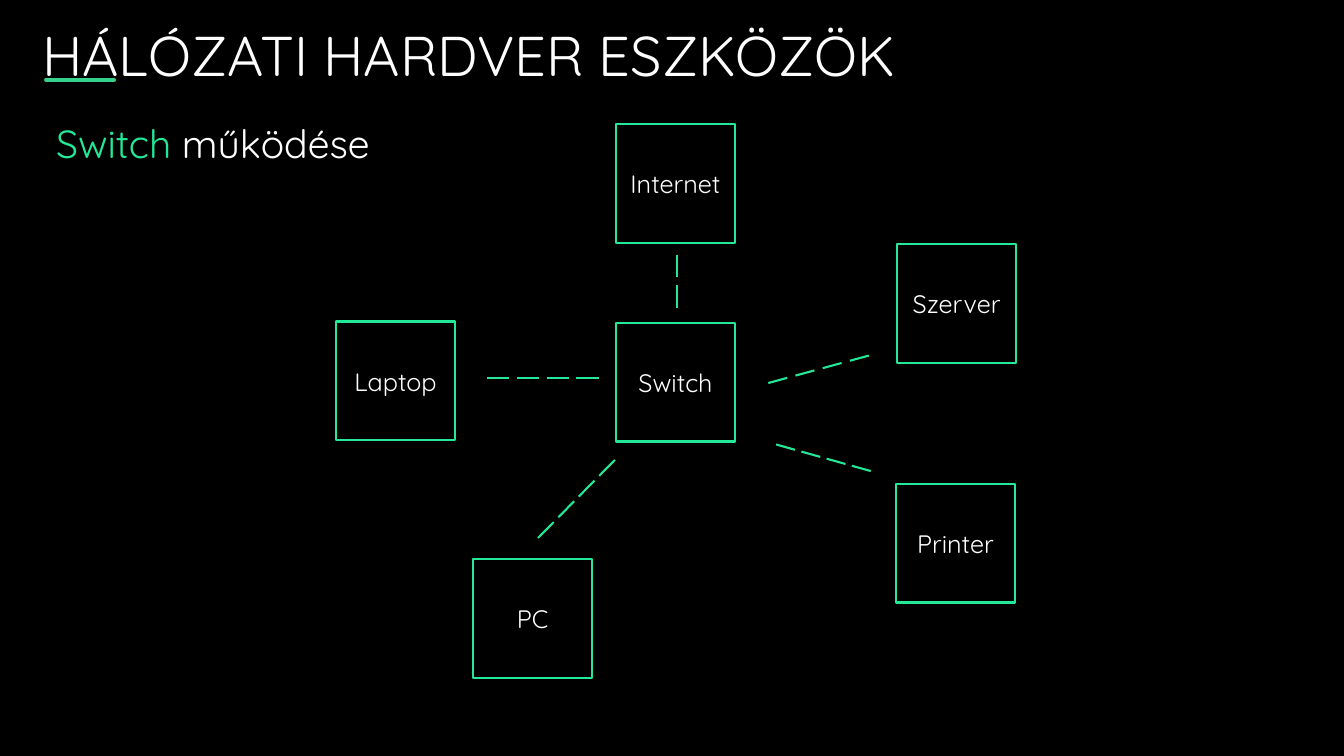
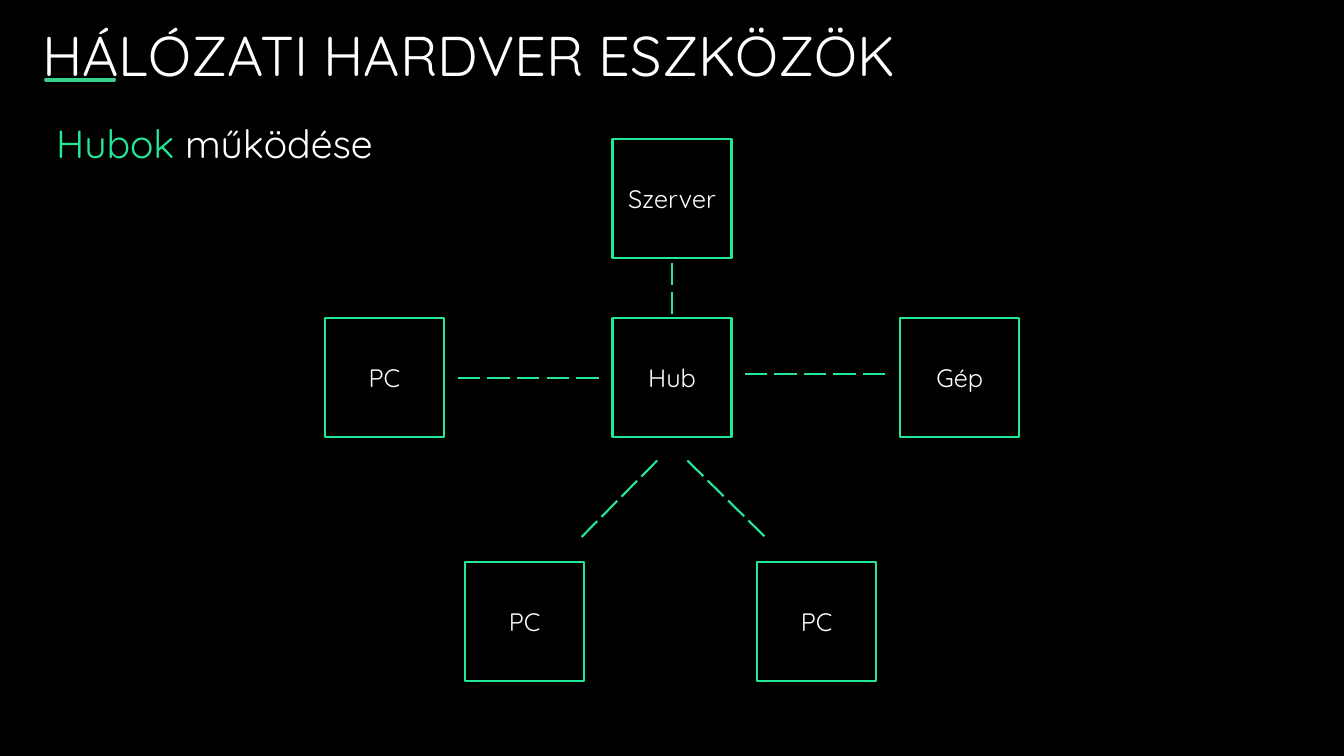
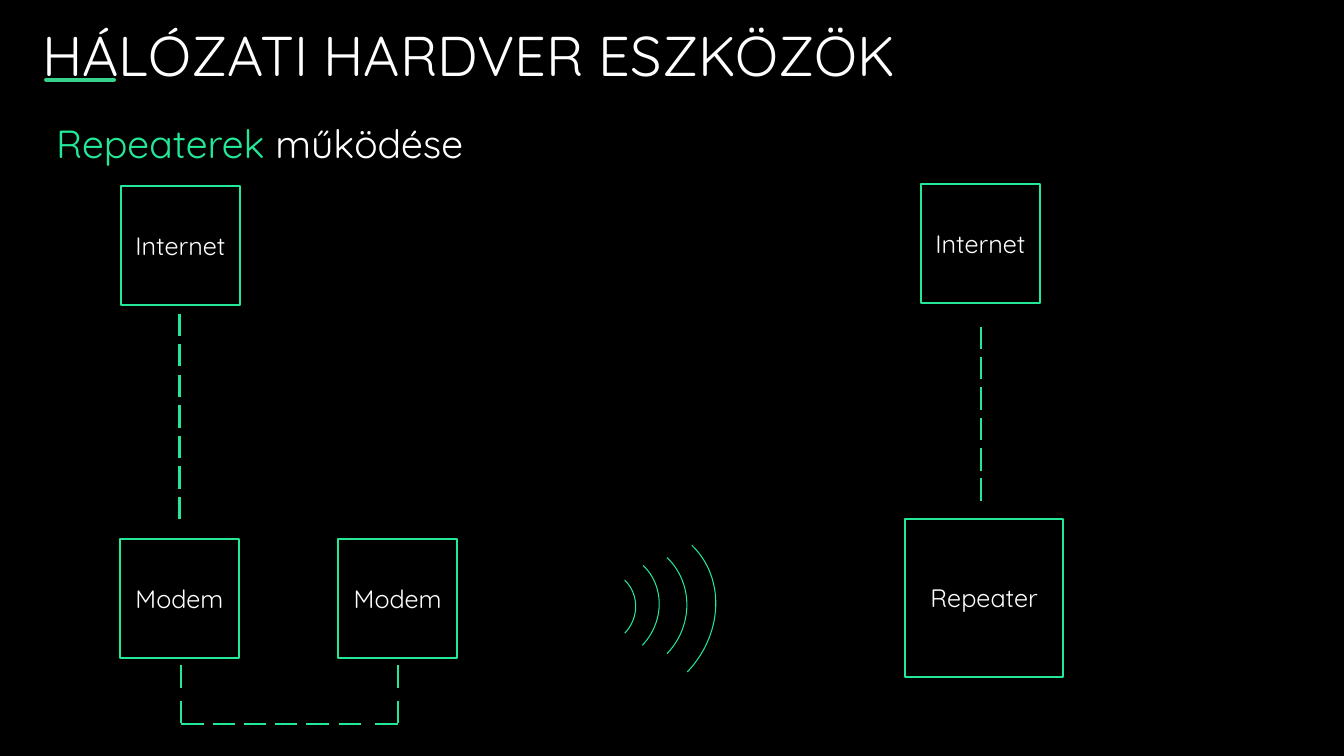
from dataclasses import dataclass
from math import hypot

from lxml.etree import SubElement
from pptx import Presentation
from pptx.dml.color import RGBColor
from pptx.enum.shapes import MSO_CONNECTOR, MSO_SHAPE
from pptx.enum.text import MSO_ANCHOR, MSO_AUTO_SIZE, PP_ALIGN
from pptx.oxml.ns import qn
from pptx.util import Pt


@dataclass(frozen=True)
class Theme:
    background: RGBColor = RGBColor(0x00, 0x00, 0x00)
    text: RGBColor = RGBColor(0xFF, 0xFF, 0xFF)
    accent: RGBColor = RGBColor(0x22, 0xE8, 0x97)
    underline: RGBColor = RGBColor(0x37, 0xD1, 0x8B)
    font: str = "Quicksand"
    title_size: float = 40
    topic_size: float = 28
    device_size: float = 18
    underline_width: float = 3
    line_width: float = 1.5
    wave_width: float = 0.75


THEME = Theme()
TITLE = "HÁLÓZATI HARDVER ESZKÖZÖK"
TOPIC_ENDING = "működése"
DEVICE = 85
LARGE_DEVICE = 113
DASH = 16
SHORT_DASH = 14
WAVE_ANGLE = 43.7

# devices: label, left, top, side; cables: start, end, dash count, dash length
SLIDES = [
    {
        "topic": "Switch",
        "topic_width": 313,
        "devices": [
            ("Switch", 440, 230.4, DEVICE),
            ("Laptop", 240, 229.6, DEVICE),
            ("PC", 338, 399, DEVICE),
            ("Szerver", 640.8, 174, DEVICE),
            ("Printer", 640, 345.4, DEVICE),
            ("Internet", 440, 88.8, DEVICE),
        ],
        "cables": [
            ((427.7, 270), (347.8, 270), 4, DASH),
            ((439.2, 328.5), (384.3, 384.3), 4, DASH),
            ((622, 336.5), (554.4, 317.5), 4, SHORT_DASH),
            ((620.6, 254), (548.8, 273.6), 4, SHORT_DASH),
            ((483.4, 182), (483.4, 219.8), 2, DASH),
        ],
        "waves": [],
    },
    {
        "topic": "Hubok",
        "topic_width": 313,
        "devices": [
            ("Hub", 437.5, 227.3, DEVICE),
            ("Szerver", 437.5, 99.4, DEVICE),
            ("Gép", 643, 227.3, DEVICE),
            ("PC", 540.7, 401.7, DEVICE),
            ("PC", 232, 227.3, DEVICE),
            ("PC", 332.3, 401.7, DEVICE),
        ],
        "cables": [
            ((427.7, 270), (326.9, 270), 5, DASH),
            ((546, 383), (491, 329), 4, DASH),
            ((469.4, 329), (415.4, 383.6), 4, DASH),
            ((632.4, 267.2), (532, 267.2), 5, DASH),
            ((480, 187.7), (480, 224.6), 2, DASH),
        ],
        "waves": [],
    },
    {
        "topic": "Repeaterek",
        "topic_width": 340.5,
        "devices": [
            ("Internet", 86.4, 133, DEVICE),
            ("Modem", 85.7, 385.2, DEVICE),
            ("Modem", 241.6, 385.2, DEVICE),
            ("Repeater", 646.5, 370.6, LARGE_DEVICE),
            ("Internet", 657.8, 131.6, DEVICE),
        ],
        "cables": [
            ((128.2, 224), (128.2, 370.8), 7, DASH),
            ((129.2, 475.2), (129.2, 516.4), 2, DASH),
            ((129.6, 517), (234.7, 517), 5, DASH),
            ((241.9, 517.4), (284.2, 517.4), 2, DASH),
            ((284, 475.2), (284, 516.4), 2, DASH),
            ((700.6, 233.3), (700.6, 357.8), 6, DASH),
        ],
        "waves": [
            (401, 406.8, 52.6, 54.7),
            (391.7, 392.4, 77.8, 83.5),
            (394.6, 384.5, 95, 99.4),
            (387.4, 370.8, 120.2, 135.4),
        ],
    },
]


def style_run(run, size, color):
    run.font.name = THEME.font
    run.font.size = Pt(size)
    run.font.color.rgb = color


def style_line(line, color, width):
    line.color.rgb = color
    line.width = Pt(width)


def add_line(slide, start, end, color, width):
    line = slide.shapes.add_connector(
        MSO_CONNECTOR.STRAIGHT, *(Pt(value) for value in (*start, *end)))
    style_line(line.line, color, width)
    SubElement(line._element.spPr, qn("a:effectLst"))
    return line


def add_outline(slide, preset, left, top, width, height, line_width):
    outline = slide.shapes.add_shape(
        preset, Pt(left), Pt(top), Pt(width), Pt(height))
    outline.shadow.inherit = False
    outline.fill.background()
    style_line(outline.line, THEME.accent, line_width)
    return outline


def add_text_frame(slide, left, top, width, height):
    frame = slide.shapes.add_textbox(
        Pt(left), Pt(top), Pt(width), Pt(height)).text_frame
    frame.word_wrap = True
    return frame


def add_heading(slide, topic, topic_width):
    title = add_text_frame(slide, 23, -36, 919, 150)
    title.vertical_anchor = MSO_ANCHOR.MIDDLE
    title.text = TITLE
    style_run(title.paragraphs[0].runs[0], THEME.title_size, THEME.text)

    underline = add_line(slide, (33, 57), (81.4, 57),
                         THEME.underline, THEME.underline_width)
    underline.line._get_or_add_ln().set("cap", "rnd")

    subtitle = add_text_frame(slide, 33, 81.4, topic_width, 41)
    subtitle.auto_size = MSO_AUTO_SIZE.SHAPE_TO_FIT_TEXT
    subtitle.text = f"{topic} "
    ending = subtitle.paragraphs[0].add_run()
    ending.text = TOPIC_ENDING
    for run, color in zip(subtitle.paragraphs[0].runs, (THEME.accent, THEME.text)):
        style_run(run, THEME.topic_size, color)


def add_device(slide, label, left, top, side):
    device = add_outline(slide, MSO_SHAPE.RECTANGLE, left, top, side, side,
                         THEME.line_width)
    frame = device.text_frame
    frame.vertical_anchor = MSO_ANCHOR.MIDDLE
    frame.text = label
    frame.paragraphs[0].alignment = PP_ALIGN.CENTER
    style_run(frame.paragraphs[0].runs[0], THEME.device_size, THEME.text)


def add_cable(slide, start, end, count, dash):
    dx, dy = end[0] - start[0], end[1] - start[1]
    length = hypot(dx, dy)
    step = (length - dash) / (count - 1)

    def point(distance):
        return (start[0] + dx * distance / length,
                start[1] + dy * distance / length)

    for index in range(count):
        offset = index * step
        add_line(slide, point(offset), point(offset + dash),
                 THEME.accent, THEME.line_width)


def add_wave(slide, left, top, width, height):
    wave = add_outline(slide, MSO_SHAPE.ARC, left, top, width, height,
                       THEME.wave_width)
    wave.rotation = WAVE_ANGLE


def main():
    deck = Presentation()
    deck.slide_width, deck.slide_height = Pt(960), Pt(540)
    backdrop = deck.slide_master.background.fill
    backdrop.solid()
    backdrop.fore_color.rgb = THEME.background

    for content in SLIDES:
        slide = deck.slides.add_slide(deck.slide_layouts[6])
        add_heading(slide, content["topic"], content["topic_width"])
        for device in content["devices"]:
            add_device(slide, *device)
        for cable in content["cables"]:
            add_cable(slide, *cable)
        for wave in content["waves"]:
            add_wave(slide, *wave)

    deck.save("out.pptx")


if __name__ == "__main__":
    main()
